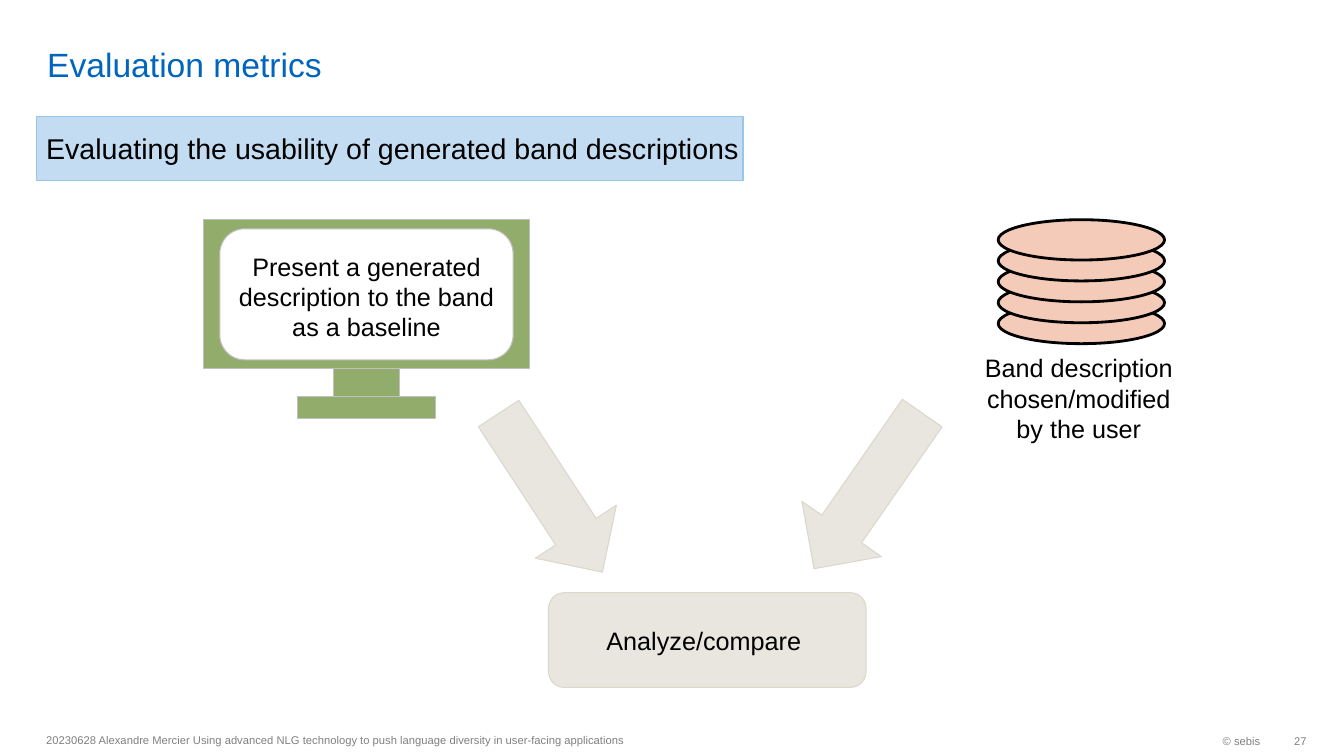
import pptx
import pptx.util
import pptx.dml.color
import pptx.enum.shapes
import pptx.enum.text

Inches = pptx.util.Inches
Pt = pptx.util.Pt
SHAPE = pptx.enum.shapes.MSO_SHAPE
ANCHOR = pptx.enum.text.MSO_ANCHOR
ALIGN = pptx.enum.text.PP_ALIGN

COLORS = {
    "title": "0065BD", "text": "000000", "footer": "808080", "white": "FFFFFF",
    "banner": "C4DCF2", "banner_line": "98C6EA",
    "monitor": "91AC6B", "monitor_line": "C0C0C0",
    "disk": "F4CBB8", "disk_line": "000000",
    "step": "E8E6DF", "step_line": "DAD7CB",
}


def rgb(name):
    return pptx.dml.color.RGBColor.from_string(COLORS[name])


def add_box(shapes, kind, box, fill, line, line_width=0.75):
    shape = shapes.add_shape(kind, *[Inches(value) for value in box])
    shape.shadow.inherit = False
    shape.fill.solid()
    shape.fill.fore_color.rgb = rgb(fill)
    shape.line.color.rgb = rgb(line)
    shape.line.width = Pt(line_width)
    return shape


def write_text(shape, text, size, color="text", align=ALIGN.LEFT,
               anchor=ANCHOR.MIDDLE, wrap=True):
    frame = shape.text_frame
    frame.word_wrap = wrap
    frame.vertical_anchor = anchor
    paragraph = frame.paragraphs[0]
    paragraph.alignment = align
    run = paragraph.add_run()
    run.text = text
    run.font.name = "Arial"
    run.font.size = Pt(size)
    run.font.color.rgb = rgb(color)


presentation = pptx.Presentation()
presentation.slide_width = Inches(13.33)
presentation.slide_height = Inches(7.5)
slide = presentation.slides.add_slide(presentation.slide_layouts[6])
shapes = slide.shapes

# Title
title = shapes.add_textbox(Inches(0.37), Inches(0.05), Inches(11.58), Inches(0.79))
title.text_frame.margin_top = title.text_frame.margin_bottom = 0
write_text(title, "Evaluation metrics", 24, "title", anchor=ANCHOR.BOTTOM)

# Banner with its heading
add_box(shapes, SHAPE.RECTANGLE, (0.36, 1.16, 7.01, 0.63), "banner", "banner_line")
heading = shapes.add_textbox(Inches(0.36), Inches(1.15), Inches(7.33), Inches(0.63))
write_text(heading, "Evaluating the usability of generated band descriptions", 20.4)

# Monitor: neck, case, foot and screen
monitor = shapes.add_group_shape()
for part in [(3.31, 3.6, 0.65, 0.38), (2.02, 2.18, 3.23, 1.48), (2.95, 3.93, 1.37, 0.22)]:
    add_box(monitor.shapes, SHAPE.RECTANGLE, part, "monitor", "monitor_line")
screen = add_box(monitor.shapes, SHAPE.ROUNDED_RECTANGLE, (2.18, 2.27, 2.91, 1.3),
                 "white", "monitor_line")
screen.adjustments[0] = 0.19

# Stack of disks, lowest first
stack = shapes.add_group_shape()
for level in range(5):
    add_box(stack.shapes, SHAPE.OVAL, (9.9, 3.01 - 0.2075 * level, 1.65, 0.4),
            "disk", "disk_line", 2)

# Captions of the monitor and the stack
captions = [
    (2.18, 2.44, 2.91, "Present a generated description to the band as a baseline"),
    (9.58, 3.45, 2.24, "Band description chosen/modified by the user"),
]
for left, top, width, text in captions:
    caption = shapes.add_textbox(Inches(left), Inches(top), Inches(width), Inches(1.01))
    write_text(caption, text, 18, align=ALIGN.CENTER, anchor=ANCHOR.TOP)

# Arrows to the comparison
for left, top, rotation in [(7.67, 4.39, 124.8), (4.52, 4.41, 56.8)]:
    arrow = add_box(shapes, SHAPE.RIGHT_ARROW, (left, top, 1.88, 0.96), "step", "step_line")
    arrow.rotation = rotation

# Comparison step
compare = add_box(shapes, SHAPE.ROUNDED_RECTANGLE, (5.44, 5.88, 3.15, 0.94),
                  "step", "step_line")
write_text(compare, "Analyze/compare ", 18, align=ALIGN.CENTER)

# Footer
footer_items = [
    (0.36, 7.18, 6.3, "20230628 Alexandre Mercier Using advanced NLG technology to push "
     "language diversity in user-facing applications", ALIGN.LEFT, True, 0.1),
    (10.26, 7.19, 2.34, "© sebis", ALIGN.RIGHT, False, 0.1),
    (12.6, 7.19, 0.36, "27", ALIGN.RIGHT, False, 0),
]
for left, top, width, text, align, wrap, margin_right in footer_items:
    footer = shapes.add_textbox(Inches(left), Inches(top), Inches(width), Inches(0.32))
    footer.text_frame.margin_right = Inches(margin_right)
    write_text(footer, text, 8, "footer", align, wrap=wrap)

presentation.save("out.pptx")
